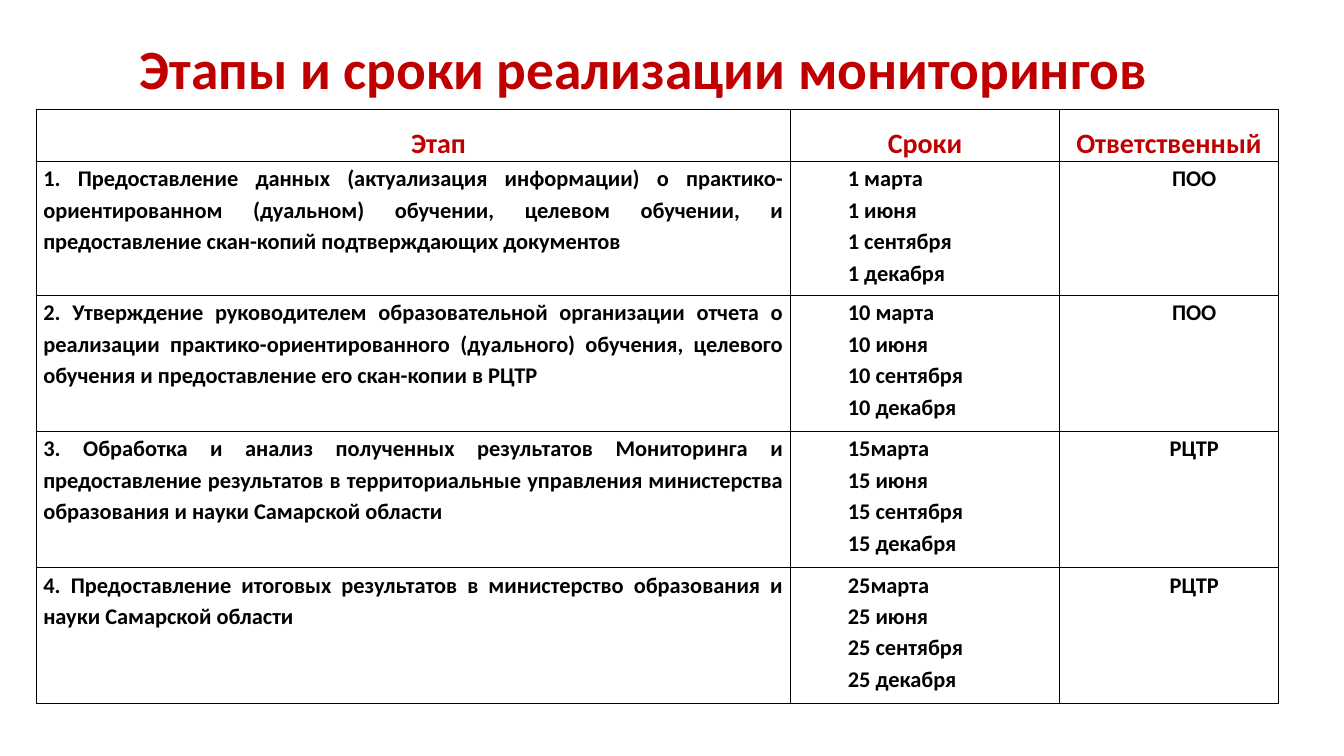
from lxml import etree
from pptx import Presentation
from pptx.dml.color import RGBColor
from pptx.enum.text import MSO_ANCHOR, PP_ALIGN
from pptx.oxml.ns import qn
from pptx.util import Inches, Pt

CENTER, JUSTIFY = PP_ALIGN.CENTER, PP_ALIGN.JUSTIFY
MIDDLE = MSO_ANCHOR.MIDDLE
RED, BLACK = "C00000", "000000"
MONTHS = ["марта", "июня", "сентября", "декабря"]
HEADERS = ["Этап", "Сроки", "Ответственный"]
# Stage, first deadline, day of the other deadlines, responsible party
STAGES = [
    ("1. Предоставление данных (актуализация информации) о практико-ориентированном "
     "(дуальном) обучении, целевом обучении, и предоставление скан-копий "
     "подтверждающих документов", "1 марта", 1, "ПОО"),
    ("2. Утверждение руководителем образовательной организации отчета о реализации "
     "практико-ориентированного (дуального) обучения, целевого обучения и "
     "предоставление его скан-копии в РЦТР", "10 марта", 10, "ПОО"),
    ("3. Обработка и анализ полученных результатов Мониторинга и предоставление "
     "результатов в территориальные управления министерства образования и науки "
     "Самарской области", "15марта", 15, "РЦТР"),
    ("4. Предоставление итоговых результатов в министерство образования и науки "
     "Самарской области", "25марта", 25, "РЦТР"),
]
COLUMN_WIDTHS = [7.48, 2.67, 2.17]
ROW_HEIGHTS = [0.5, 1.33, 1.35, 1.35, 1.35]


def format_paragraph(paragraph, size, color, alignment, spacing):
    paragraph.alignment = alignment
    paragraph.line_spacing = spacing
    paragraph.font.name = "Calibri"
    paragraph.font.size = Pt(size)
    paragraph.font.bold = True
    paragraph.font.color.rgb = RGBColor.from_string(color)


def fill_cell(cell, text, size, color, alignment, spacing, indented):
    """Write text into a cell without fill, framed by thin black borders."""
    cell.margin_left = cell.margin_right = Inches(0.07)
    cell.margin_top = cell.margin_bottom = 0
    cell.text = text
    for paragraph in cell.text_frame.paragraphs:
        format_paragraph(paragraph, size, color, alignment, spacing)
        if indented:
            properties = paragraph._p.get_or_add_pPr()
            properties.set("marL", str(Inches(0.5)))
            properties.set("indent", "0")
    cell_properties = cell._tc.get_or_add_tcPr()
    for side in ("lnL", "lnR", "lnT", "lnB"):
        border = etree.SubElement(cell_properties, qn(f"a:{side}"), w=str(Pt(1)))
        border_fill = etree.SubElement(border, qn("a:solidFill"))
        etree.SubElement(border_fill, qn("a:srgbClr"), val=BLACK)
    cell.fill.background()


presentation = Presentation()
presentation.slide_width = Inches(13.33)
presentation.slide_height = Inches(7.5)
slide = presentation.slides.add_slide(presentation.slide_layouts[5])

title = slide.shapes.title
title.left, title.top = Inches(0.36), Inches(0.25)
title.width, title.height = Inches(12.05), Inches(0.91)
title.text_frame.text = "Этапы и сроки реализации мониторингов"
title.text_frame.vertical_anchor = MIDDLE
format_paragraph(title.text_frame.paragraphs[0], 39.6, RED, CENTER, 0.9)

table = slide.shapes.add_table(
    len(ROW_HEIGHTS), len(COLUMN_WIDTHS), Inches(0.36), Inches(1.09),
    Inches(sum(COLUMN_WIDTHS)), Inches(sum(ROW_HEIGHTS))).table
table.first_row = table.horz_banding = False
for column, width in zip(table.columns, COLUMN_WIDTHS):
    column.width = Inches(width)
for row, height in zip(table.rows, ROW_HEIGHTS):
    row.height = Inches(height)

for index, header in enumerate(HEADERS):
    fill_cell(table.cell(0, index), header, 20, RED, CENTER, 1.5, index == 0)

for row_index, (stage, first_date, day, responsible) in enumerate(STAGES, start=1):
    dates = "\n".join([first_date] + [f"{day} {month}" for month in MONTHS[1:]])
    fill_cell(table.cell(row_index, 0), stage, 16, BLACK, JUSTIFY, 1.15, False)
    fill_cell(table.cell(row_index, 1), dates, 16, BLACK, JUSTIFY, 1.15, True)
    fill_cell(table.cell(row_index, 2), responsible, 16, BLACK, CENTER, 1.15, True)

presentation.save("out.pptx")
